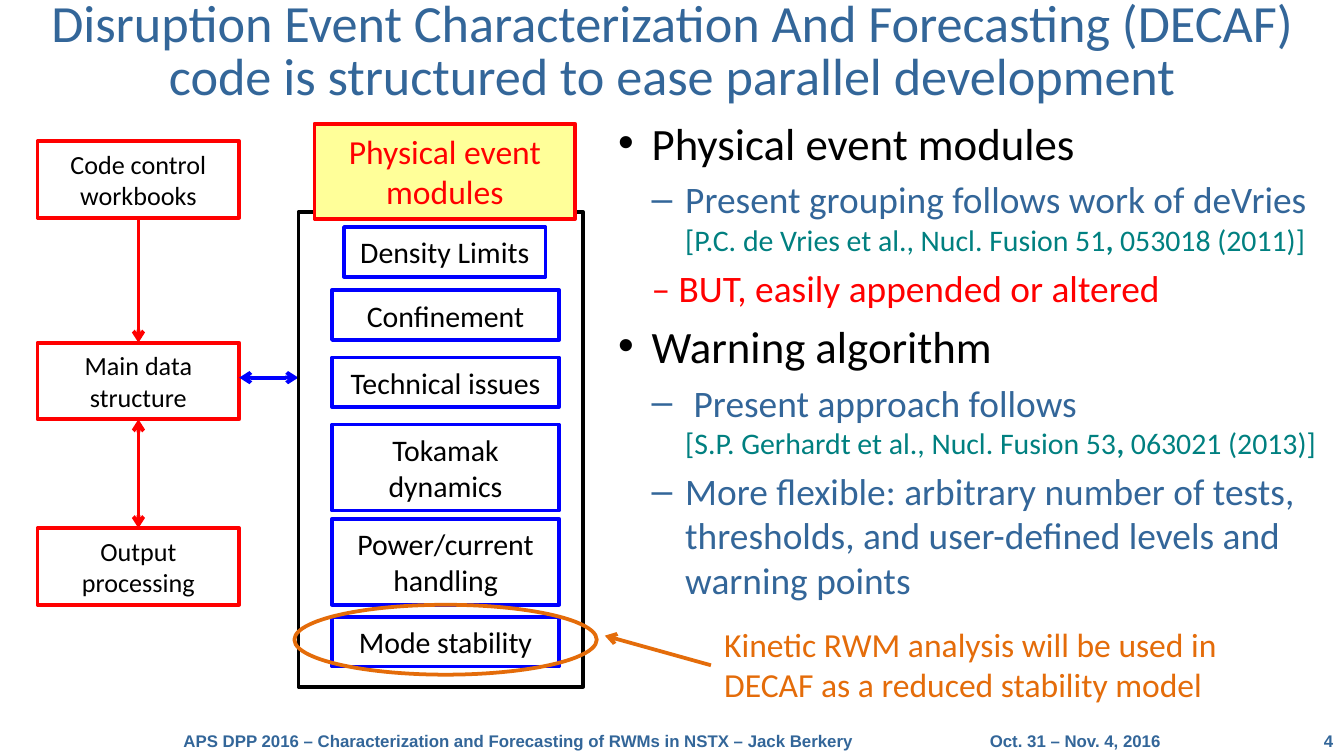
from lxml import etree
from pptx import Presentation
from pptx import util as u
from pptx.dml.color import RGBColor
from pptx.enum import shapes, text
from pptx.oxml import ns

COLORS = {
    "blue": "336699", "teal": "008080", "red": "FF0000", "black": "000000",
    "module": "0000FF", "header": "FFFF99", "orange": "E46C0A",
}
CENTER, LEFT, RIGHT = text.PP_ALIGN.CENTER, text.PP_ALIGN.LEFT, text.PP_ALIGN.RIGHT


def rgb(color):
    return RGBColor.from_string(COLORS[color])


def inches(*lengths):
    return [u.Inches(length) for length in lengths]


def style(font, size, color, name="Calibri", bold=False):
    font.size, font.name, font.bold = u.Pt(size), name, bold
    font.color.rgb = rgb(color)


def add_text(slide, box, words, size, color, align=LEFT, name="Calibri", bold=False,
             margins=(0.1, 0.05), anchor=text.MSO_ANCHOR.TOP, tabs=()):
    frame = slide.shapes.add_textbox(*inches(*box)).text_frame
    frame.word_wrap = True
    frame.vertical_anchor = anchor
    frame.margin_left = frame.margin_right = u.Inches(margins[0])
    frame.margin_top = frame.margin_bottom = u.Inches(margins[1])
    paragraph = frame.paragraphs[0]
    paragraph.text = words
    paragraph.alignment = align
    if tabs:
        stops = etree.SubElement(paragraph._p.get_or_add_pPr(), ns.qn("a:tabLst"))
        for stop in tabs:
            etree.SubElement(stops, ns.qn("a:tab"), pos=str(u.Inches(stop)), algn="l")
    style(paragraph.font, size, color, name, bold)
    return paragraph


def add_outline(slide, box, color, kind=shapes.MSO_SHAPE.RECTANGLE, fill=None):
    outline = slide.shapes.add_shape(kind, *inches(*box))
    outline.shadow.inherit = False
    outline.line.color.rgb = rgb(color)
    outline.line.width = u.Pt(2)
    if fill:
        outline.fill.solid()
        outline.fill.fore_color.rgb = rgb(fill)
    else:
        outline.fill.background()
    return outline


def add_label(slide, box, words, size, border, color="black", fill=None):
    frame = add_outline(slide, box, border, fill=fill).text_frame
    frame.word_wrap = True
    paragraph = frame.paragraphs[0]
    paragraph.text = words
    paragraph.alignment = CENTER
    style(paragraph.font, size, color)


def add_arrow(slide, start, end, color, both=False):
    arrow = slide.shapes.add_connector(shapes.MSO_CONNECTOR.STRAIGHT, *inches(*start, *end))
    arrow.line.color.rgb = rgb(color)
    arrow.line.width = u.Pt(2)
    line = arrow.line._get_or_add_ln()
    for tag in ("a:headEnd", "a:tailEnd") if both else ("a:tailEnd",):
        etree.SubElement(line, ns.qn(tag), type="arrow")
    etree.SubElement(arrow._element.spPr, ns.qn("a:effectLst"))


def add_data_flow(slide, left, top):
    """Column of code stages, linked to each other and to the event modules."""
    width, height = 1.5, 0.57
    middle = left + width / 2
    stages = [("Code control workbooks", 0), ("Main data structure", 1.5),
              ("Output processing", 2.88)]
    for words, offset in stages:
        add_label(slide, (left, top + offset, width, height), words, 14, "red")
    for (_, upper), (_, lower), both in zip(stages, stages[1:], (False, True)):
        add_arrow(slide, (middle, top + upper + height), (middle, top + lower), "red", both)
    link = top + 1.76
    add_arrow(slide, (left + 1.94, link), (left + width, link), "module", both=True)


def add_event_modules(slide, left, top, width, height):
    one_line, two_lines, inset = 0.37, 0.64, 0.25
    modules = [("Confinement", 0.58, one_line), ("Technical issues", 1.08, one_line),
               ("Tokamak dynamics", 1.58, two_lines),
               ("Power/current handling", 2.28, two_lines),
               ("Mode stability", 3.01, one_line)]
    add_label(slide, (left + 0.34, top + 0.11, 1.5, one_line), "Density Limits", 16, "module")
    for words, offset, tall in modules:
        add_label(slide, (left + inset, top + offset, 1.69, tall), words, 16, "module")
    add_outline(slide, (left, top, width, height), "black")
    add_label(slide, (left + 0.12, top - 0.66, 1.94, 0.71), "Physical event modules", 18,
              "red", "red", "header")
    add_outline(slide, (left - 0.03, top + 2.92, 2.25, 0.52), "orange",
                shapes.MSO_SHAPE.OVAL)


def add_bullets(slide, box):
    """Each point is (margin, bullet, size, color, words, citation parts)."""
    points = [
        (0.25, "•", 24, "black", "Physical event modules", None),
        (0.5, "–", 20, "blue", "Present grouping follows work of deVries",
         ("[P.C. de Vries et al., Nucl. Fusion 51", ",", " 053018 (2011)]")),
        (0.25, None, 20, "red", "– BUT, easily appended or altered", None),
        (0.25, "•", 24, "black", "Warning algorithm", None),
        (0.5, "–", 20, "blue", " Present approach follows",
         ("[S.P. Gerhardt et al., Nucl. Fusion 53", ", ", "063021 (2013)]")),
        (0.5, "–", 20, "blue", "More flexible: arbitrary number of tests, thresholds, "
         "and user-defined levels and warning points", None),
    ]
    frame = slide.shapes.add_textbox(*inches(*box)).text_frame
    frame.word_wrap = True
    for index, (margin, bullet, size, color, words, citation) in enumerate(points):
        paragraph = frame.add_paragraph() if index else frame.paragraphs[0]
        paragraph.level = 0 if size == 24 else 1
        if index:
            paragraph.space_before = u.Pt(size * 0.2)
        properties = paragraph._p.get_or_add_pPr()
        properties.set("marL", str(u.Inches(margin)))
        properties.set("indent", str(u.Inches(-0.25 if bullet else 0)))
        if bullet:
            etree.SubElement(properties, ns.qn("a:buFont"), typeface="Arial")
            etree.SubElement(properties, ns.qn("a:buChar"), char=bullet)
        else:
            etree.SubElement(properties, ns.qn("a:buNone"))
        style(paragraph.font, size, color)
        paragraph.add_run().text = words
        if citation:
            paragraph.add_line_break()
            for part in citation:
                run = paragraph.add_run()
                run.text = part
                style(run.font, 16, "teal", bold=part.strip() == ",")


def add_stability_note(slide, box):
    left, top = box[:2]
    add_text(slide, box, "Kinetic RWM analysis will be used in DECAF as a reduced "
             "stability model", 18, "orange")
    add_arrow(slide, (left, top + 0.36), (left - 0.79, top + 0.14), "orange")


def add_title(slide, box):
    title = add_text(slide, box, "Disruption Event Characterization And Forecasting (DECAF) "
                     "code is structured to ease parallel development", 28, "blue", CENTER,
                     margins=(0.05, 0.05), anchor=text.MSO_ANCHOR.MIDDLE)
    title.line_spacing = 0.85


def add_footer(slide, top, height):
    entries = [
        (9.25, 0.67, "4", RIGHT, ()),
        (1, 8, "APS DPP 2016 – Characterization and Forecasting of RWMs in NSTX – "
         "Jack Berkery\t\tOct. 31 – Nov. 4, 2016", CENTER, (5, 6)),
    ]
    for left, width, words, align, tabs in entries:
        add_text(slide, (left, top, width, height), words, 9, "blue", align, "Arial", True,
                 margins=(0, 0.04), tabs=tabs)


def main():
    deck = Presentation()
    deck.slide_width, deck.slide_height = u.Inches(10), u.Pt(405)
    slide = deck.slides.add_slide(deck.slide_layouts[6])
    add_footer(slide, 5.4, 0.23)
    add_bullets(slide, (4.5, 0.81, 5.42, 4.37))
    add_title(slide, (0, 0, 10, 0.79))
    add_data_flow(slide, 0.28, 1.05)
    add_event_modules(slide, 2.22, 1.58, 2.12, 3.53)
    add_stability_note(slide, (5.29, 4.59, 4.5, 0.71))
    deck.save("out.pptx")


if __name__ == "__main__":
    main()
